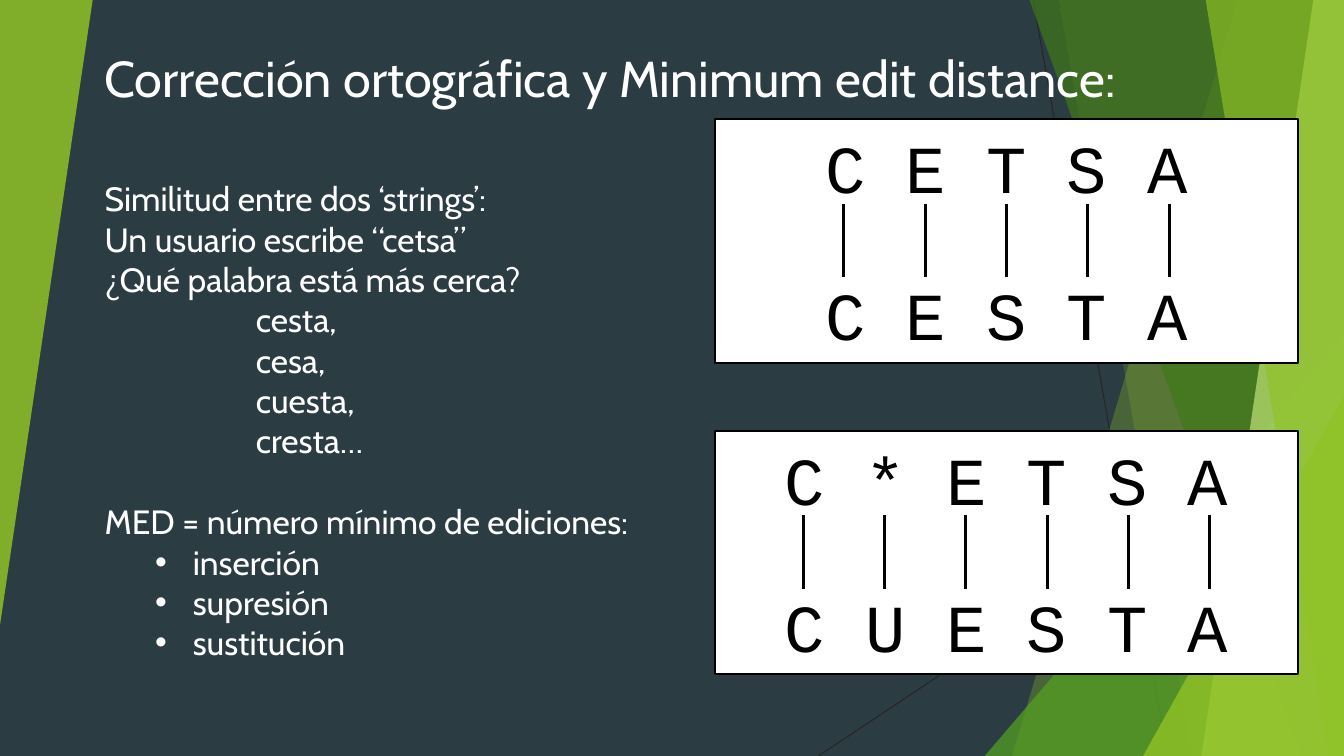
from lxml.etree import SubElement
from pptx import Presentation
from pptx.dml.color import RGBColor
from pptx.enum.shapes import MSO_CONNECTOR, MSO_SHAPE
from pptx.enum.text import MSO_ANCHOR, PP_ALIGN
from pptx.oxml.ns import qn
from pptx.util import Pt

WIDTH, HEIGHT = 960, 540
BLACK = RGBColor(0x00, 0x00, 0x00)
WHITE = RGBColor(0xFF, 0xFF, 0xFF)
SLATE = RGBColor(0x2C, 0x3C, 0x43)
CHARCOAL = RGBColor(0x26, 0x26, 0x26)
LIME = RGBColor(0x90, 0xC2, 0x26)
GREEN = RGBColor(0x54, 0xA0, 0x21)
FOREST = RGBColor(0x3F, 0x78, 0x19)
PALE = RGBColor(0xC0, 0xE4, 0x74)

PANEL_LEFT, PANEL_WIDTH, PANEL_HEIGHT = 510.5, 417, 174.2
WORD_WIDTH, WORD_HEIGHT = 371.5, 65.5
LETTER_STEP = 58.1

PLAIN = (0, 0, 0, None)
EXAMPLE = (3, 108, 0, None)
BULLET = (1, 63, -27, "•")
BODY = [
    ("Similitud entre dos ‘strings’:", PLAIN, 0),
    ("Un usuario escribe “cetsa”", PLAIN, 0),
    ("¿Qué palabra está más cerca?", PLAIN, 0),
    ("cesta,", EXAMPLE, 0),
    ("cesa,", EXAMPLE, 0),
    ("cuesta,", EXAMPLE, 0),
    ("cresta…", EXAMPLE, 0),
    ("MED = número mínimo de ediciones:", PLAIN, 29),
    ("inserción", BULLET, 0),
    ("supresión", BULLET, 0),
    ("sustitución", BULLET, 0),
]


class SlidePainter:
    text_font = "Cabin"
    letter_font = "Courier New"

    def __init__(self, page):
        self.page = page
        fill = page.background.fill
        fill.solid()
        fill.fore_color.rgb = SLATE

    def paint(self, shape, color=None, opacity=100, outline=None):
        shape.shadow.inherit = False
        if color is None:
            shape.fill.background()
        else:
            shape.fill.solid()
            shape.fill.fore_color.rgb = color
            if opacity < 100:
                tint = shape.element.spPr.find(qn("a:solidFill")).find(qn("a:srgbClr"))
                SubElement(tint, qn("a:alpha"), val=str(opacity * 1000))
        if outline is None:
            shape.line.fill.background()
        else:
            shape.line.color.rgb = outline
            shape.line.width = Pt(1.5)

    def line(self, x1, y1, x2, y2, color, width):
        line = self.page.shapes.add_connector(
            MSO_CONNECTOR.STRAIGHT, Pt(x1), Pt(y1), Pt(x2), Pt(y2))
        line.line.color.rgb = color
        line.line.width = Pt(width)
        SubElement(line.element.spPr, qn("a:effectLst"))

    def band(self, top_x, bottom_x, color, opacity):
        top = Pt(-0.7)
        builder = self.page.shapes.build_freeform(Pt(top_x), top)
        builder.add_line_segments([
            (Pt(WIDTH), top), (Pt(WIDTH), Pt(HEIGHT)), (Pt(bottom_x), Pt(HEIGHT))])
        self.paint(builder.convert_to_shape(), color, opacity)

    def triangle(self, left, top, width, height, color, opacity, rotation=0):
        shape = self.page.shapes.add_shape(
            MSO_SHAPE.ISOSCELES_TRIANGLE, Pt(left), Pt(top), Pt(width), Pt(height))
        shape.adjustments[0] = 1
        shape.rotation = rotation
        self.paint(shape, color, opacity)

    def rectangle(self, left, top, width, height, color, outline):
        shape = self.page.shapes.add_shape(
            MSO_SHAPE.RECTANGLE, Pt(left), Pt(top), Pt(width), Pt(height))
        self.paint(shape, color, outline=outline)
        return shape

    def text_box(self, left, top, width, height):
        box = self.page.shapes.add_textbox(Pt(left), Pt(top), Pt(width), Pt(height))
        box.text_frame.word_wrap = True
        box.text_frame.vertical_anchor = MSO_ANCHOR.TOP
        return box

    def format_font(self, para, font_name, size, color):
        for span in para.runs:
            span.font.name = font_name
            span.font.size = Pt(size)
            span.font.color.rgb = color

    def word(self, box, letters):
        box.text_frame.text = " ".join(letters)
        para = box.text_frame.paragraphs[0]
        para.alignment = PP_ALIGN.CENTER
        self.format_font(para, self.letter_font, 48, BLACK)

    def paragraphs(self, box, entries, size):
        frame = box.text_frame
        for index, (text, (level, margin, indent, bullet), gap) in enumerate(entries):
            para = frame.add_paragraph() if index else frame.paragraphs[0]
            para.text = text
            para.level = level
            properties = para._p.get_or_add_pPr()
            properties.set("marL", str(Pt(margin)))
            properties.set("indent", str(Pt(indent)))
            if bullet:
                SubElement(properties, qn("a:buFont"), typeface="Arial")
                SubElement(properties, qn("a:buChar"), char=bullet)
            if gap:
                para.space_before = Pt(gap)
            self.format_font(para, self.text_font, size, WHITE)

    def alignment_panel(self, top, typed, target):
        self.rectangle(PANEL_LEFT, top, PANEL_WIDTH, PANEL_HEIGHT, WHITE, BLACK)
        center = PANEL_LEFT + PANEL_WIDTH / 2
        word_left = center - WORD_WIDTH / 2
        self.word(self.rectangle(
            word_left, top + 1.4, WORD_WIDTH, WORD_HEIGHT, None, WHITE), typed)
        self.word(self.text_box(
            word_left, top + 106.9, WORD_WIDTH, WORD_HEIGHT), target)
        for index in range(len(typed)):
            x = center + LETTER_STEP * (index - (len(typed) - 1) / 2)
            self.line(x, top + 60.5, x, top + 113, BLACK, 2.25)


def main():
    deck = Presentation()
    deck.slide_width, deck.slide_height = Pt(WIDTH), Pt(HEIGHT)
    painter = SlidePainter(deck.slides.add_slide(deck.slide_layouts[6]))

    painter.line(738, 0, 834, HEIGHT, CHARCOAL, 0.75)
    painter.line(WIDTH, 290, 584.6, HEIGHT, CHARCOAL, 0.75)
    painter.band(884.2, 722.9, LIME, 30)
    painter.band(756, 851.8, LIME, 20)
    painter.triangle(703.4, 239.8, 256.6, 300.2, GREEN, 72)
    painter.band(735.1, 929.5, FOREST, 70)
    painter.band(938.2, 858.2, PALE, 70)
    painter.band(861.1, 949, LIME, 65)
    painter.triangle(816.5, 283, 143.5, 257, LIME, 80)
    painter.triangle(0, 0, 66.2, 446.4, LIME, 85, rotation=180)

    painter.alignment_panel(85, "CETSA", "CESTA")
    painter.alignment_panel(307.6, "C*ETSA", "CUESTA")

    painter.paragraphs(painter.text_box(67.7, 123.8, 427, 356.4), BODY, 24)
    title = [("Corrección ortográfica y Minimum edit distance:", PLAIN, 0)]
    painter.paragraphs(painter.text_box(67.7, 30.2, 796.3, 94.3), title, 36)

    deck.save("out.pptx")


if __name__ == "__main__":
    main()
